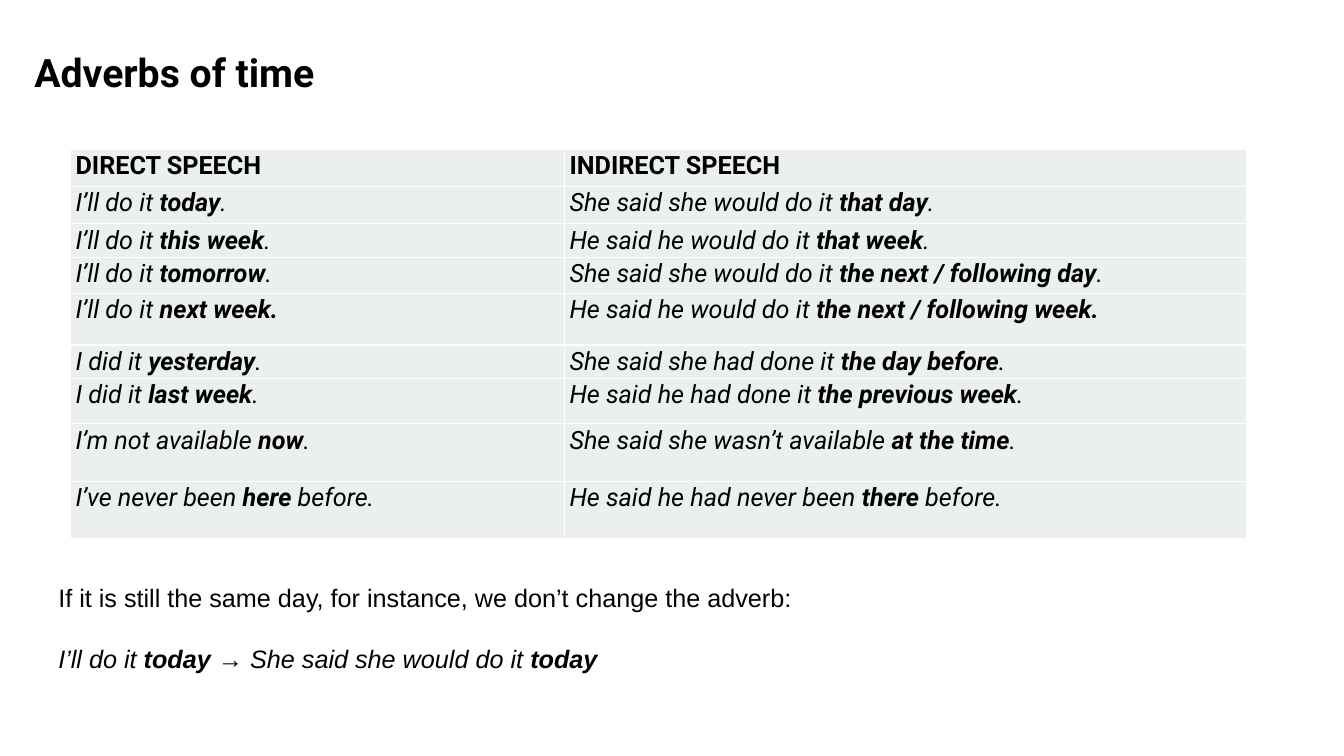
from lxml.etree import SubElement
from pptx import Presentation
from pptx.dml.color import RGBColor
from pptx.enum.text import MSO_ANCHOR, PP_ALIGN
from pptx.oxml import parse_xml
from pptx.oxml.ns import nsdecls
from pptx.util import Pt


def color(hex_value):
    return RGBColor.from_string(hex_value)


def add_runs(p, text, **formats):
    """Write text into a paragraph; parts between asterisks are bold."""
    for i, part in enumerate(text.split("*")):
        if part:
            r = p.add_run()
            r.text = part
            for name, value in {"size": Pt(18), "bold": i % 2 == 1, **formats}.items():
                setattr(r.font, name, value)
            r.font.color.rgb = color("000000")


prs = Presentation()
prs.slide_width, prs.slide_height = Pt(960), Pt(540)
s = prs.slides.add_slide(prs.slide_layouts[5])

# Title
title = s.shapes.title
title.left, title.top, title.width, title.height = Pt(17.28), Pt(8.64), Pt(828), Pt(89.28)
tf = title.text_frame
tf.word_wrap = True
tf.vertical_anchor = MSO_ANCHOR.MIDDLE
p = tf.paragraphs[0]
p.alignment = PP_ALIGN.LEFT
p.line_spacing = 0.9
add_runs(p, "*Adverbs of time*", size=Pt(28), name="Roboto")

# Direct and indirect speech, with row heights
rows = [
    (26.64, "*DIRECT SPEECH*", "*INDIRECT SPEECH*"),
    (26.64, "I’ll do it *today*.", "She said she would do it *that day*."),
    (23.76, "I’ll do it *this week*.", "He said he would do it *that week*."),
    (25.92, "I’ll do it *tomorrow*.", "She said she would do it *the next / following day*."),
    (36.72, "I’ll do it *next week.*", "He said he would do it *the next / following week.*"),
    (23.76, "I did it *yesterday*.", "She said she had done it *the day before*."),
    (32.4, "I did it *last week*.", "He said he had done it *the previous week*."),
    (41.04, "I’m not available *now*.", "She said she wasn’t available *at the time*."),
    (41.04, "I’ve never been *here* before.", "He said he had never been *there* before."),
]
frame = s.shapes.add_table(len(rows), 2, Pt(50.4), Pt(106.56), Pt(840), Pt(278))
table = frame.table
table.first_row = table.horz_banding = False
for column, width in zip(table.columns, (352.8, 486.72)):
    column.width = Pt(width)

cell_format = {"margin_left": Pt(3.6), "margin_right": Pt(3.6),
               "margin_top": Pt(1.44), "margin_bottom": Pt(1.44)}
for i, (height, *texts) in enumerate(rows):
    table.rows[i].height = Pt(height)
    for j, text in enumerate(texts):
        cell = table.cell(i, j)
        for name, value in cell_format.items():
            setattr(cell, name, value)
        add_runs(cell.text_frame.paragraphs[0], text, name="Roboto", italic=i > 0)
        cell.fill.solid()
        cell.fill.fore_color.rgb = color("EBEFF0")
        # White borders go before the fill
        tc_pr = cell._tc.get_or_add_tcPr()
        for k, side in enumerate("LRTB"):
            outer = (side == "R" and j == 1) or (side == "B" and i == len(rows) - 1)
            tc_pr.insert(k, parse_xml(
                f'<a:ln{side} {nsdecls("a")} w="{Pt(0.5 if outer else 1)}"><a:solidFill>'
                f'<a:srgbClr val="FFFFFF"/></a:solidFill></a:ln{side}>'))

# Note below the table
note = s.shapes.add_textbox(Pt(34.56), Pt(412.56), Pt(840), Pt(72.72))
tf = note.text_frame
tf.word_wrap = True
add_runs(tf.paragraphs[0],
         "If it is still the same day, for instance, we don’t change the adverb:", name="Arial")
p = tf.add_paragraph()
p.space_before = Pt(21.6)
add_runs(p, "I’ll do it *today *→ She said she would do it *today*", name="Arial", italic=True)

prs.save("out.pptx")
